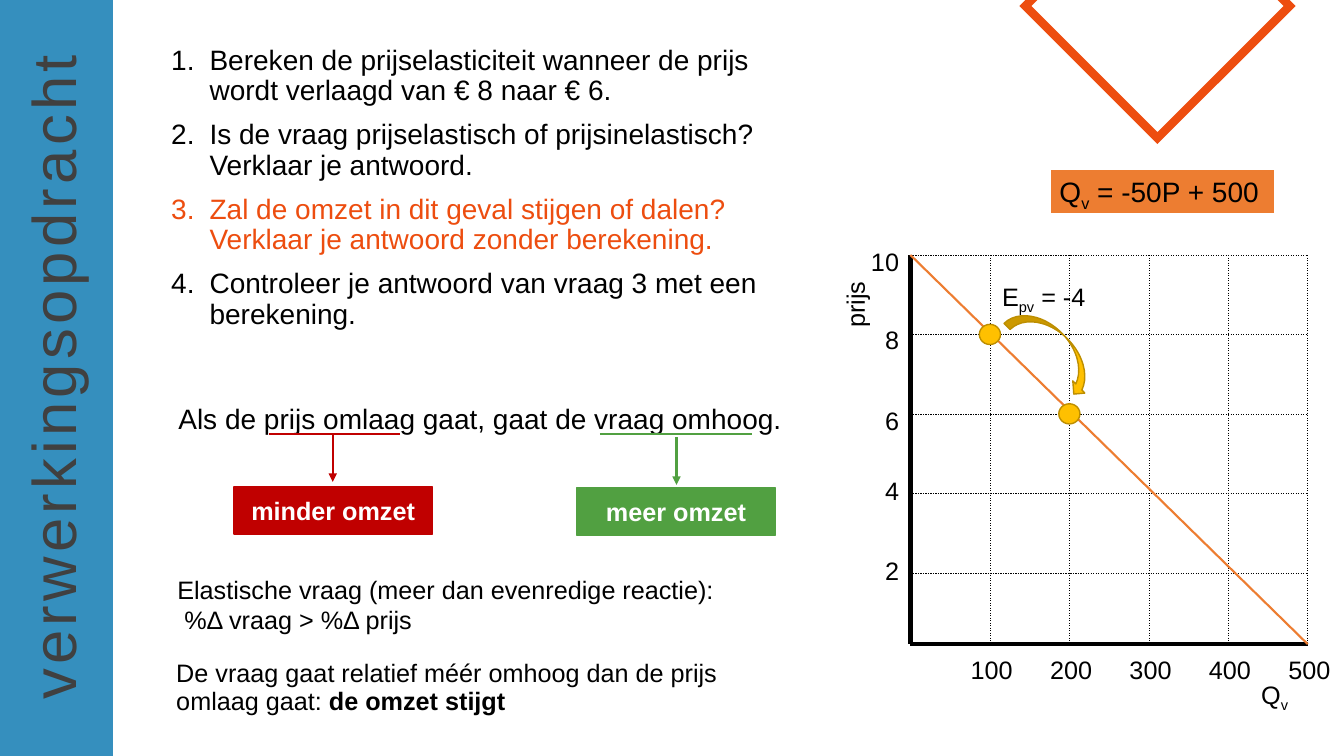
from lxml import etree
from pptx import Presentation
from pptx import util as u
from pptx.dml.color import RGBColor
from pptx.enum import dml, shapes, text
from pptx.oxml.ns import qn

BLACK, WHITE, ORANGE, GOLD = "000000", "FFFFFF", "ED7D31", "FFC000"
ACCENT, RED, GREEN, GOLD_EDGE = "ED4D0F", "C00000", "51A041", "BD8E00"
SLIDE_W, SLIDE_H = 13.33, 7.5


def paint(target, colour):
    target.solid()
    target.fore_color.rgb = RGBColor.from_string(colour)


def add_child(parent, tag, **attributes):
    return etree.SubElement(parent, qn(tag), attributes)


def stroke(shape, colour, width):
    paint(shape.line.fill, colour)
    shape.line.width = u.Pt(width)


def line(slide, start, end, colour, width, dashed=False, arrow=False):
    ends = [u.Inches(v) for v in (*start, *end)]
    rule = slide.shapes.add_connector(shapes.MSO_CONNECTOR.STRAIGHT, *ends)
    stroke(rule, colour, width)
    if dashed:
        rule.line.dash_style = dml.MSO_LINE.DASH
    if arrow:
        add_child(rule.line._get_or_add_ln(), "a:tailEnd", type="triangle")
    add_child(rule._element.spPr, "a:effectLst")


def block(slide, kind, box, fill, edge=None, width=1):
    shape = slide.shapes.add_shape(kind, *[u.Inches(v) for v in box])
    shape.shadow.inherit = False
    paint(shape.fill, fill)
    if edge:
        stroke(shape, edge, width)
    else:
        shape.line.fill.background()
    return shape


def write(paragraph, content, size, colour=BLACK, bold=False, sub=False):
    run = paragraph.add_run()
    run.text = content
    run.font.name = "Arial"
    run.font.size = u.Pt(size)
    run.font.bold = bold
    run.font.color.rgb = RGBColor.from_string(colour)
    if sub:
        run.font._element.set("baseline", "-25000")
    return run


def textbox(slide, box, wrap=True, rotation=0):
    holder = slide.shapes.add_textbox(*[u.Inches(v) for v in box])
    holder.rotation = rotation
    holder.text_frame.word_wrap = wrap
    return holder.text_frame


def label(slide, box, content, size=18, colour=BLACK, rotation=0):
    frame = textbox(slide, box, False, rotation)
    return write(frame.paragraphs[0], content, size, colour)


def with_subscript(paragraph, symbol, index, rest, size):
    write(paragraph, symbol, size)
    write(paragraph, index, size, sub=True)
    if rest:
        write(paragraph, rest, size)


def sidebar(slide, width):
    band = block(slide, shapes.MSO_SHAPE.RECTANGLE, (0, 0, width, SLIDE_H), "1A80B6")
    add_child(band.fill._xPr.find(".//" + qn("a:srgbClr")), "a:alpha", val="88000")
    title_w, title_h = 6.7, 0.84
    title = label(slide, (0.52 - title_w / 2, 3.69 - title_h / 2, title_w, title_h),
                  "verwerkingsopdracht", 44, "404040", 270)
    title.font._element.set("spc", "300")


def corner_diamond(slide, tip_x, tip_y, reach):
    top = -0.07
    side = tip_y - reach
    cut = reach - (side - top)
    outline = [(tip_x - cut, top), (tip_x + cut, top), (tip_x + reach, side),
               (tip_x, tip_y), (tip_x - reach, side)]
    points = [(u.Inches(x), u.Inches(y)) for x, y in outline]
    builder = slide.shapes.build_freeform(*points[0], scale=1.0)
    builder.add_line_segments(points[1:], close=True)
    diamond = builder.convert_to_shape()
    diamond.shadow.inherit = False
    diamond.fill.background()
    stroke(diamond, ACCENT, 6)
    add_child(diamond.line._get_or_add_ln(), "a:miter", lim="800000")


def questions(slide, box):
    frame = textbox(slide, box)
    items = [
        ("Bereken de prijselasticiteit wanneer de prijs wordt verlaagd van € 8 naar € 6.", BLACK),
        ("Is de vraag prijselastisch of prijsinelastisch? Verklaar je antwoord.", BLACK),
        ("Zal de omzet in dit geval stijgen of dalen? Verklaar je antwoord zonder berekening.", ACCENT),
        ("Controleer je antwoord van vraag 3 met een berekening.", BLACK),
    ]
    for number, (question, colour) in enumerate(items):
        paragraph = frame.add_paragraph() if number else frame.paragraphs[0]
        paragraph.line_spacing = 0.9
        paragraph.space_before = u.Pt(10)
        properties = paragraph._p.get_or_add_pPr()
        properties.set("marL", str(u.Inches(0.38)))
        properties.set("indent", str(-u.Inches(0.38)))
        add_child(properties, "a:buAutoNum", type="arabicPeriod")
        write(paragraph, question, 20, colour)


def demand_graph(slide, left, top, width, height):
    cell = width / 5
    right, bottom = left + width, top + height
    for step in range(5):
        y = top + step * cell
        x = left + (step + 1) * cell
        line(slide, (left, y), (right, y), BLACK, 0.25, dashed=True)
        line(slide, (x, top), (x, bottom), BLACK, 0.25, dashed=True)
        label(slide, (x - 0.29, bottom + 0.05, 0.62, 0.4), str(100 * (step + 1)))
    line(slide, (left, top), (left, bottom), BLACK, 3)
    line(slide, (right, bottom), (left, bottom), BLACK, 3)

    for price, drop in ((10, -0.14), (8, 0.64), (6, 1.44), (4, 2.14), (2, 2.93)):
        label_w = 0.48 if price == 10 else 0.34
        label(slide, (left - 0.01 - label_w, top + drop, label_w, 0.4), str(price))
    label(slide, (left - 0.88, top + 0.29, 0.66, 0.4), "prijs", rotation=270)
    quantity = textbox(slide, (right - 0.56, bottom + 0.3, 0.48, 0.4), False)
    with_subscript(quantity.paragraphs[0], "Q", "v", "", 18)

    line(slide, (left, top), (right, bottom), ORANGE, 1.5)
    dot_w, dot_h = 0.21, 0.2
    for step in (1, 2):
        block(slide, shapes.MSO_SHAPE.OVAL,
              (left + step * cell - dot_w / 2, top + step * cell - dot_h / 2, dot_w, dot_h),
              GOLD, GOLD_EDGE)
    move = block(slide, shapes.MSO_SHAPE.CURVED_DOWN_ARROW,
                 (left + 0.89, top + 0.77, 1.07, 0.34), GOLD, GOLD_EDGE)
    move.rotation = 45.4
    elasticity = textbox(slide, (left + 0.81, top + 0.21, 1.06, 0.4), False)
    with_subscript(elasticity.paragraphs[0], "E", "pv", " = -4", 18)


def demand_formula(slide, box):
    formula = block(slide, shapes.MSO_SHAPE.RECTANGLE, box, ORANGE, WHITE, 1.5).text_frame
    formula.word_wrap = False
    formula.vertical_anchor = text.MSO_ANCHOR.TOP
    formula.paragraphs[0].alignment = text.PP_ALIGN.LEFT
    with_subscript(formula.paragraphs[0], "Q", "v", " = -50P + 500", 20)


def effect(slide, box, caption, colour, underline, arrow_x, arrow_top):
    left, top, width, height = box
    underline_y = 4.31
    line(slide, (underline[0], underline_y), (underline[1], underline_y), colour, 1.5)
    line(slide, (arrow_x, arrow_top), (arrow_x, arrow_top + 0.47), colour, 1.5, arrow=True)
    frame = block(slide, shapes.MSO_SHAPE.RECTANGLE, box, colour, colour).text_frame
    frame.vertical_anchor = text.MSO_ANCHOR.MIDDLE
    frame.paragraphs[0].alignment = text.PP_ALIGN.CENTER
    write(frame.paragraphs[0], caption, 18, WHITE, bold=True)


def reasoning(slide, left, top):
    statement = textbox(slide, (left + 0.02, top, 6.22, 0.71)).paragraphs[0]
    statement.space_before = u.Pt(4)
    write(statement, "Als de prijs omlaag gaat, gaat de vraag omhoog.", 20)
    effect(slide, (2.32, top + 0.9, 1.97, 0.47), "minder omzet", RED, (2.67, 3.97), 3.3, 4.31)
    effect(slide, (5.72, top + 0.91, 1.97, 0.47), "meer omzet", GREEN, (5.95, 7.46), 6.71, 4.34)

    elastic = textbox(slide, (left + 0.01, top + 1.72, 6.02, 0.71)).paragraphs[0]
    write(elastic, "Elastische vraag (meer dan evenredige reactie):", 18)
    elastic.add_line_break()
    write(elastic, " %Δ vraag > %Δ prijs", 18)

    conclusion = textbox(slide, (left, top + 2.58, 6.24, 0.73)).paragraphs[0]
    conclusion.line_spacing = 0.9
    conclusion.space_before = u.Pt(10)
    write(conclusion, "De vraag gaat relatief méér omhoog dan de prijs omlaag gaat: ", 18)
    write(conclusion, "de omzet stijgt", 18, bold=True)


def main():
    deck = Presentation()
    deck.slide_width, deck.slide_height = u.Inches(SLIDE_W), u.Inches(SLIDE_H)
    slide = deck.slides.add_slide(deck.slide_layouts[6])
    corner_diamond(slide, 11.48, 1.37, 1.31)
    sidebar(slide, 1.12)
    questions(slide, (1.6, 0.41, 6.52, 6.8))
    demand_graph(slide, 9.03, 2.53, 3.94, 3.86)
    demand_formula(slide, (10.41, 1.68, 2.24, 0.44))
    reasoning(slide, 1.65, 3.93)
    deck.save("out.pptx")


if __name__ == "__main__":
    main()
